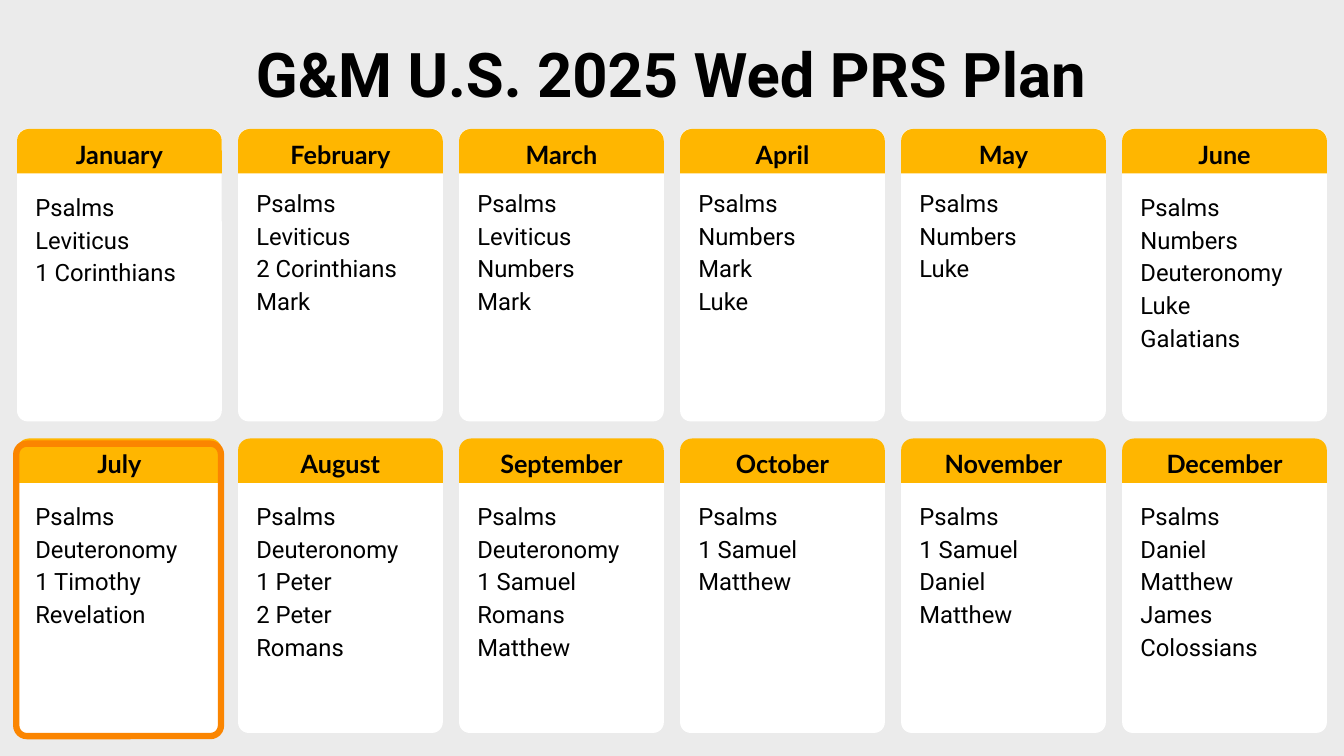
from pptx import Presentation
from pptx.dml.color import RGBColor
from pptx.enum.shapes import MSO_SHAPE
from pptx.enum.text import MSO_AUTO_SIZE, PP_ALIGN
from pptx.util import Cm, Pt

ROUNDED = MSO_SHAPE.ROUNDED_RECTANGLE
ROUNDED_TOP = MSO_SHAPE.ROUND_2_SAME_RECTANGLE
FIT_TEXT = MSO_AUTO_SIZE.SHAPE_TO_FIT_TEXT
LEFT, CENTER = PP_ALIGN.LEFT, PP_ALIGN.CENTER

BLACK, WHITE, GREY = "000000", "FFFFFF", "EBEBEB"
AMBER, ORANGE = "FFB600", "FB8500"

COLUMNS = 6
CARD_LEFT, CARD_PITCH = 0.43, 5.57
CARD_WIDTH, CARD_HEIGHT = 5.16, 7.37
HEADER_HEIGHT = 1.12
CORNER = 0.052
# Card top, then header and list offsets from it, for each row
ROWS = [(3.25, 0, 1.5), (11.1, -0.05, 1.54)]
# Months whose list sits a little lower in its card
LIST_DROP = {"January": 0.1, "June": 0.1}
CURRENT_MONTH = "July"

PLAN = {
    "January": ["Psalms", "Leviticus", "1 Corinthians"],
    "February": ["Psalms", "Leviticus", "2 Corinthians", "Mark"],
    "March": ["Psalms", "Leviticus", "Numbers", "Mark"],
    "April": ["Psalms", "Numbers", "Mark", "Luke"],
    "May": ["Psalms", "Numbers", "Luke"],
    "June": ["Psalms", "Numbers", "Deuteronomy", "Luke", "Galatians"],
    "July": ["Psalms", "Deuteronomy", "1 Timothy", "Revelation"],
    "August": ["Psalms", "Deuteronomy", "1 Peter", "2 Peter", "Romans"],
    "September": ["Psalms", "Deuteronomy", "1 Samuel", "Romans", "Matthew"],
    "October": ["Psalms", "1 Samuel", "Matthew"],
    "November": ["Psalms", "1 Samuel", "Daniel", "Matthew"],
    "December": ["Psalms", "Daniel", "Matthew", "James", "Colossians"],
}


def rgb(color):
    return RGBColor.from_string(color)


def add_panel(s, kind, box, corner, fill=None, line=None):
    sp = s.shapes.add_shape(kind, *map(Cm, box))
    sp.shadow.inherit = False
    sp.adjustments[0] = corner
    if fill:
        sp.fill.solid()
        sp.fill.fore_color.rgb = rgb(fill)
    else:
        sp.fill.background()
    if line:
        sp.line.color.rgb = rgb(line)
        sp.line.width = Pt(4.5)
    else:
        sp.line.fill.background()


def add_text(s, box, lines, font, size, bold=False, align=CENTER, indent=0, after=0):
    tf = s.shapes.add_textbox(*map(Cm, box)).text_frame
    tf.word_wrap = True
    tf.auto_size = FIT_TEXT
    tf.margin_left = Cm(indent)
    tf.margin_top = tf.margin_right = tf.margin_bottom = 0
    for i, line in enumerate(lines):
        p = tf.add_paragraph() if i else tf.paragraphs[0]
        p.text = line
        p.alignment = align
        p.space_after = Pt(after)
        p.font.name = font
        p.font.size = Pt(size)
        p.font.bold = bold
        p.font.color.rgb = rgb(BLACK)


def add_title(s, left, top, width, height):
    add_text(s, (left, top, width, height), ["G&M U.S. 2025 Wed PRS Plan"],
             "Roboto", 44, bold=True)


def add_month(s, month, books, box, header_offset, list_offset):
    """Place one month card: panel, header band, name and reading list."""
    left, top, width, height = box
    header_top = top + header_offset
    add_panel(s, ROUNDED, box, CORNER, fill=WHITE)
    add_panel(s, ROUNDED_TOP, (left, header_top, width, HEADER_HEIGHT), 0.267, fill=AMBER)
    add_text(s, (left, header_top + 0.26, width, 0.76), [month], "Lato", 18, bold=True)
    list_top = top + list_offset + LIST_DROP.get(month, 0)
    add_text(s, (left - 0.04, list_top, width, 0.83 * len(books)), books,
             "Roboto", 17, align=LEFT, indent=0.5, after=3)
    if month == CURRENT_MONTH:
        add_panel(s, ROUNDED, (left - 0.02, top + 0.08, width, height), CORNER, line=ORANGE)


def add_calendar(s):
    for i, (month, books) in enumerate(PLAN.items()):
        row, column = divmod(i, COLUMNS)
        top, header_offset, list_offset = ROWS[row]
        box = (CARD_LEFT + column * CARD_PITCH, top, CARD_WIDTH, CARD_HEIGHT)
        add_month(s, month, books, box, header_offset, list_offset)


def main():
    prs = Presentation()
    prs.slide_width, prs.slide_height = Cm(33.87), Cm(19.05)
    s = prs.slides.add_slide(prs.slide_layouts[6])
    s.background.fill.solid()
    s.background.fill.fore_color.rgb = rgb(GREY)
    add_title(s, 0.64, 0.91, 32.56, 1.88)
    add_calendar(s)
    prs.save("out.pptx")


if __name__ == "__main__":
    main()
